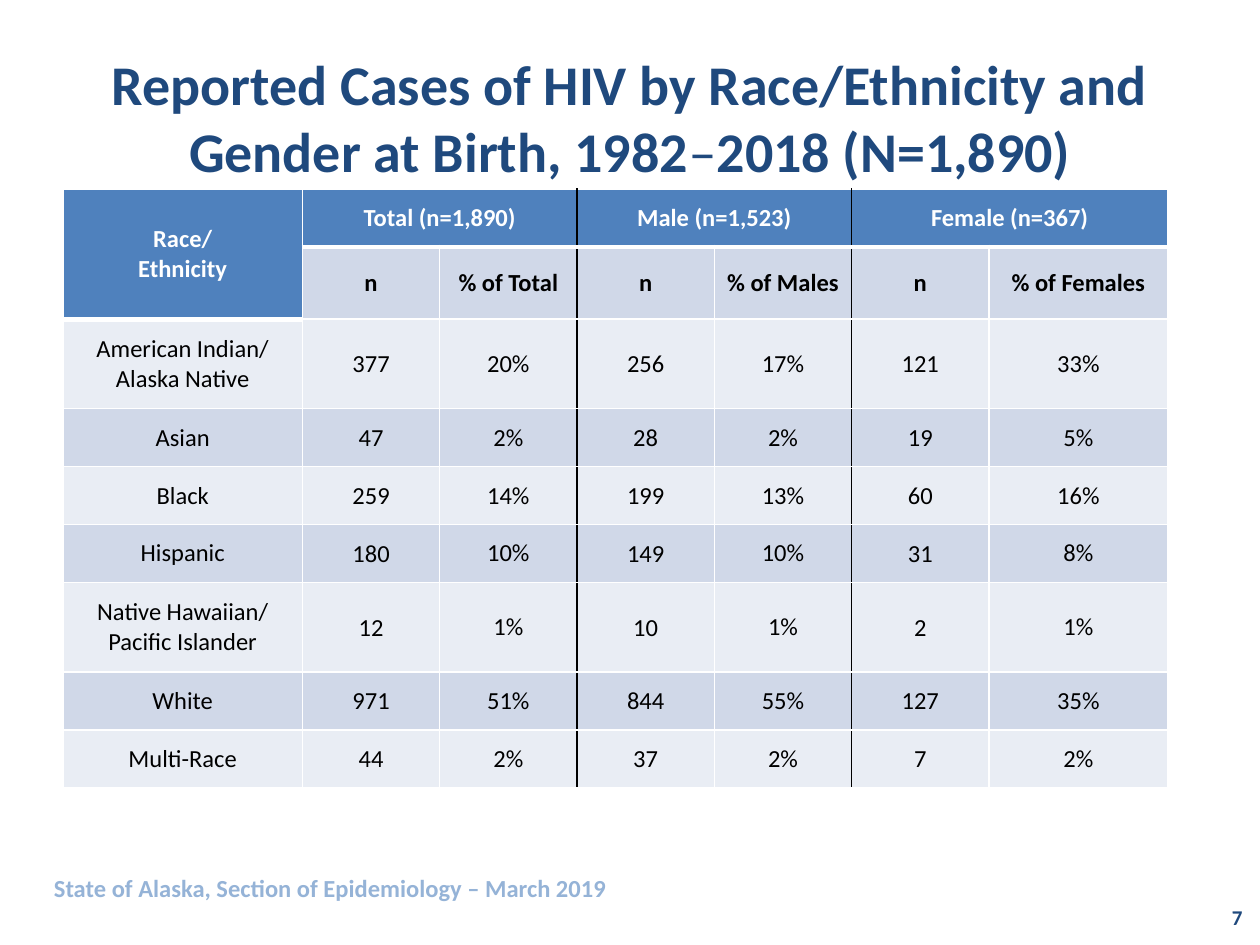
from lxml.etree import SubElement
from pptx import Presentation
from pptx.dml.color import RGBColor
from pptx.enum.text import MSO_ANCHOR, PP_ALIGN
from pptx.oxml.ns import qn
from pptx.util import Inches, Pt

NAVY, BLUE, PALE_BLUE = "1F497D", "4F81BD", "95B3D7"
WHITE, BLACK = "FFFFFF", "000000"
BANDS = ["D0D8E8", "E9EDF4"]

COLUMNS = [1.9] + [1.09] * 5 + [1.42]
ROW, TALL_ROW = 0.46, 0.71
GROUP_ENDS = [3, 5]  # columns before which a black rule stands
ROWS = [
    ["Race/\nEthnicity", "Total (n=1,890)", "", "Male (n=1,523)", "", "Female (n=367)", ""],
    ["", "n", "% of Total", "n", "% of Males", "n", "% of Females"],
    ["American Indian/\nAlaska Native", "377", "20%", "256", "17%", "121", "33%"],
    ["Asian", "47", "2%", "28", "2%", "19", "5%"],
    ["Black", "259", "14%", "199", "13%", "60", "16%"],
    ["Hispanic", "180", "10%", "149", "10%", "31", "8%"],
    ["Native Hawaiian/\nPacific Islander", "12", "1%", "10", "1%", "2", "1%"],
    ["White", "971", "51%", "844", "55%", "127", "35%"],
    ["Multi-Race", "44", "2%", "37", "2%", "7", "2%"],
]


def color(value):
    return RGBColor.from_string(value)


def style_font(font, size, value, bold):
    font.name = "Calibri"
    font.size = Pt(size)
    font.bold = bold
    font.color.rgb = color(value)


def add_title(page):
    title = page.shapes.title
    title.left, title.top, title.width, title.height = map(Inches, (0.5, 0.3, 9, 1.25))
    title.text_frame.vertical_anchor = MSO_ANCHOR.MIDDLE
    para = title.text_frame.paragraphs[0]
    para.alignment = PP_ALIGN.CENTER
    for text, bold in [
        ("Reported Cases of HIV by Race/Ethnicity and Gender at Birth, 1982", True),
        ("–", False),
        ("2018 (N=1,890)", True),
    ]:
        span = para.add_run()
        span.text = text
        style_font(span.font, 32, NAVY, bold)


def add_label(page, area, text, size, value, align, anchor):
    box = page.shapes.add_textbox(*map(Inches, area))
    frame = box.text_frame
    frame.word_wrap = True
    frame.vertical_anchor = anchor
    para = frame.paragraphs[0]
    para.text = text
    para.alignment = align
    style_font(para.font, size, value, True)


def add_border(cell, side, value, width):
    line = SubElement(cell._tc.get_or_add_tcPr(), qn(f"a:ln{side}"), w=str(Pt(width)))
    fill = SubElement(line, qn("a:solidFill"))
    SubElement(fill, qn("a:srgbClr"), val=value)


def style_cell(cell, row, column):
    header = row == 0 or (row == 1 and column == 0)
    end = column + (cell.span_width if cell.is_merge_origin else 1)
    # Borders come before the fill in the cell's properties.
    add_border(cell, "L", BLACK if column in GROUP_ENDS else WHITE, 1)
    add_border(cell, "R", BLACK if end in GROUP_ENDS else WHITE, 1)
    add_border(cell, "T", WHITE, 1)
    add_border(cell, "B", WHITE, 3 if header else 1)
    cell.fill.solid()
    cell.fill.fore_color.rgb = color(BLUE if header else BANDS[(row + 1) % 2])
    cell.vertical_anchor = MSO_ANCHOR.MIDDLE
    if row > 1 and column % 2:
        cell.margin_left = cell.margin_top = cell.margin_right = Inches(0.01)
        cell.margin_bottom = 0
    for para in cell.text_frame.paragraphs:
        para.alignment = PP_ALIGN.CENTER
        style_font(para.font, 14, WHITE if header else BLACK, row < 2)


def add_case_table(page):
    heights = [TALL_ROW if row > 1 and "\n" in texts[0] else ROW
               for row, texts in enumerate(ROWS)]
    table = page.shapes.add_table(
        len(ROWS), len(COLUMNS), Inches(0.5), Inches(1.5),
        Inches(sum(COLUMNS)), Inches(sum(heights))).table
    for column, width in zip(table.columns, COLUMNS):
        column.width = Inches(width)
    for row, height in zip(table.rows, heights):
        row.height = Inches(height)
    table.cell(0, 0).merge(table.cell(1, 0))
    for column in (1, 3, 5):
        table.cell(0, column).merge(table.cell(0, column + 1))
    for row, texts in enumerate(ROWS):
        for column, text in enumerate(texts):
            cell = table.cell(row, column)
            if text:
                cell.text = text
            style_cell(cell, row, column)


def main():
    deck = Presentation()
    deck.slide_width, deck.slide_height = Inches(10), Inches(7.5)
    page = deck.slides.add_slide(deck.slide_layouts[5])
    page.background.fill.solid()
    page.background.fill.fore_color.rgb = color(WHITE)
    add_title(page)
    add_case_table(page)
    add_label(page, (7.63, 7.08, 2.33, 0.4), "7", 12, NAVY,
              PP_ALIGN.RIGHT, MSO_ANCHOR.MIDDLE)
    add_label(page, (0.33, 6.88, 7, 0.34),
              "State of Alaska, Section of Epidemiology – March 2019", 14, PALE_BLUE,
              PP_ALIGN.LEFT, MSO_ANCHOR.TOP)
    deck.save("out.pptx")


if __name__ == "__main__":
    main()
